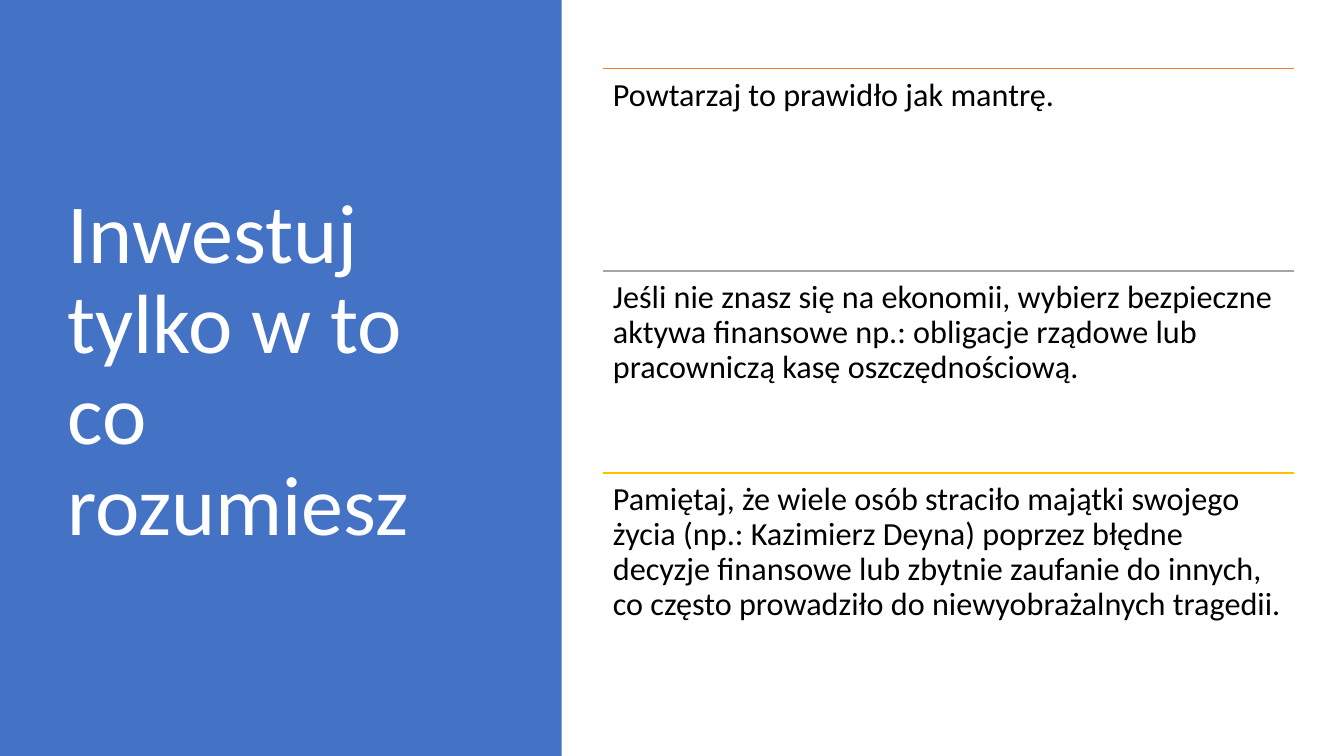
"""Build the slide with an investing rule and its three explanations."""
import dataclasses

import lxml.etree
import pptx
import pptx.dml.color
import pptx.enum.shapes
import pptx.enum.text
import pptx.oxml.ns
import pptx.shapes.group
import pptx.util

RGBColor = pptx.dml.color.RGBColor
BLUE = RGBColor(0x44, 0x72, 0xC4)
ORANGE = RGBColor(0xED, 0x7D, 0x31)
GRAY = RGBColor(0xA5, 0xA5, 0xA5)
GOLD = RGBColor(0xFF, 0xC0, 0x00)
WHITE = RGBColor(0xFF, 0xFF, 0xFF)
BLACK = RGBColor(0x00, 0x00, 0x00)

FONT = "Calibri"
SLIDE_WIDTH = pptx.util.Inches(13.33)
SLIDE_HEIGHT = pptx.util.Inches(7.5)
PANEL_WIDTH = pptx.util.Inches(5.57)
HEADING_LEFT = pptx.util.Inches(0.57)
HEADING_WIDTH = pptx.util.Inches(4.16)
CONTENT_TOP = pptx.util.Inches(0.68)
CONTENT_HEIGHT = pptx.util.Inches(6.02)
ADVICE_LEFT = pptx.util.Inches(5.98)
ADVICE_WIDTH = pptx.util.Inches(6.85)
INSET = pptx.util.Inches(0.1)


@dataclasses.dataclass(frozen=True)
class Advice:
    """One explanation and the colour of the rule above it."""

    wording: str
    color: RGBColor


ADVICES = (
    Advice("Powtarzaj to prawidło jak mantrę.", ORANGE),
    Advice(
        "Jeśli nie znasz się na ekonomii, wybierz bezpieczne aktywa finansowe np.: "
        "obligacje rządowe lub pracowniczą kasę oszczędnościową.",
        GRAY,
    ),
    Advice(
        "Pamiętaj, że wiele osób straciło majątki swojego życia (np.: Kazimierz Deyna) "
        "poprzez błędne decyzje finansowe lub zbytnie zaufanie do innych, "
        "co często prowadziło do niewyobrażalnych tragedii.",
        GOLD,
    ),
)
ROW_HEIGHT = CONTENT_HEIGHT // len(ADVICES)


def write(
    frame: pptx.text.text.TextFrame,
    wording: str,
    size: int,
    color: RGBColor,
    anchor: pptx.enum.text.MSO_ANCHOR,
    space_after: float = 0,
) -> None:
    """Put one left-aligned run into a wrapping text frame."""
    frame.word_wrap = True
    frame.auto_size = pptx.enum.text.MSO_AUTO_SIZE.NONE
    frame.vertical_anchor = anchor
    paragraph = frame.paragraphs[0]
    paragraph.alignment = pptx.enum.text.PP_ALIGN.LEFT
    paragraph.line_spacing = 0.9
    paragraph.space_after = pptx.util.Pt(space_after)
    run = paragraph.add_run()
    run.text = wording
    run.font.name = FONT
    run.font.size = pptx.util.Pt(size)
    run.font.color.rgb = color


def draw_heading(slide: pptx.slide.Slide) -> None:
    """Draw the blue panel with the title in front of it."""
    panel = slide.shapes.add_shape(
        pptx.enum.shapes.MSO_SHAPE.RECTANGLE, 0, 0, PANEL_WIDTH, SLIDE_HEIGHT
    )
    panel.shadow.inherit = False
    panel.fill.solid()
    panel.fill.fore_color.rgb = BLUE
    panel.line.fill.background()

    heading = slide.shapes.title
    heading.left, heading.top = HEADING_LEFT, CONTENT_TOP
    heading.width, heading.height = HEADING_WIDTH, CONTENT_HEIGHT
    write(
        heading.text_frame,
        "Inwestuj tylko w to co rozumiesz",
        60,
        WHITE,
        pptx.enum.text.MSO_ANCHOR.MIDDLE,
    )
    panel.element.addnext(heading.element)


def draw_advice(group: pptx.shapes.group.GroupShape, row: int, advice: Advice) -> None:
    """Draw a coloured rule and the explanation below it."""
    top = CONTENT_TOP + row * ROW_HEIGHT
    rule = group.shapes.add_connector(
        pptx.enum.shapes.MSO_CONNECTOR.STRAIGHT,
        ADVICE_LEFT,
        top,
        ADVICE_LEFT + ADVICE_WIDTH,
        top,
    )
    rule.line.color.rgb = advice.color
    rule.line.width = pptx.util.Pt(1)
    lxml.etree.SubElement(rule.element.spPr, pptx.oxml.ns.qn("a:effectLst"))

    explanation = group.shapes.add_textbox(ADVICE_LEFT, top, ADVICE_WIDTH, ROW_HEIGHT)
    frame = explanation.text_frame
    frame.margin_left = frame.margin_right = INSET
    frame.margin_top = frame.margin_bottom = INSET
    write(frame, advice.wording, 23, BLACK, pptx.enum.text.MSO_ANCHOR.TOP, 8)


def main() -> None:
    """Build and save the presentation."""
    presentation = pptx.Presentation()
    presentation.slide_width = SLIDE_WIDTH
    presentation.slide_height = SLIDE_HEIGHT
    title_only = presentation.slide_layouts.get_by_name("Title Only")
    slide = presentation.slides.add_slide(title_only)
    draw_heading(slide)
    advice_group = slide.shapes.add_group_shape()
    for row, advice in enumerate(ADVICES):
        draw_advice(advice_group, row, advice)
    presentation.save("out.pptx")


if __name__ == "__main__":
    main()
